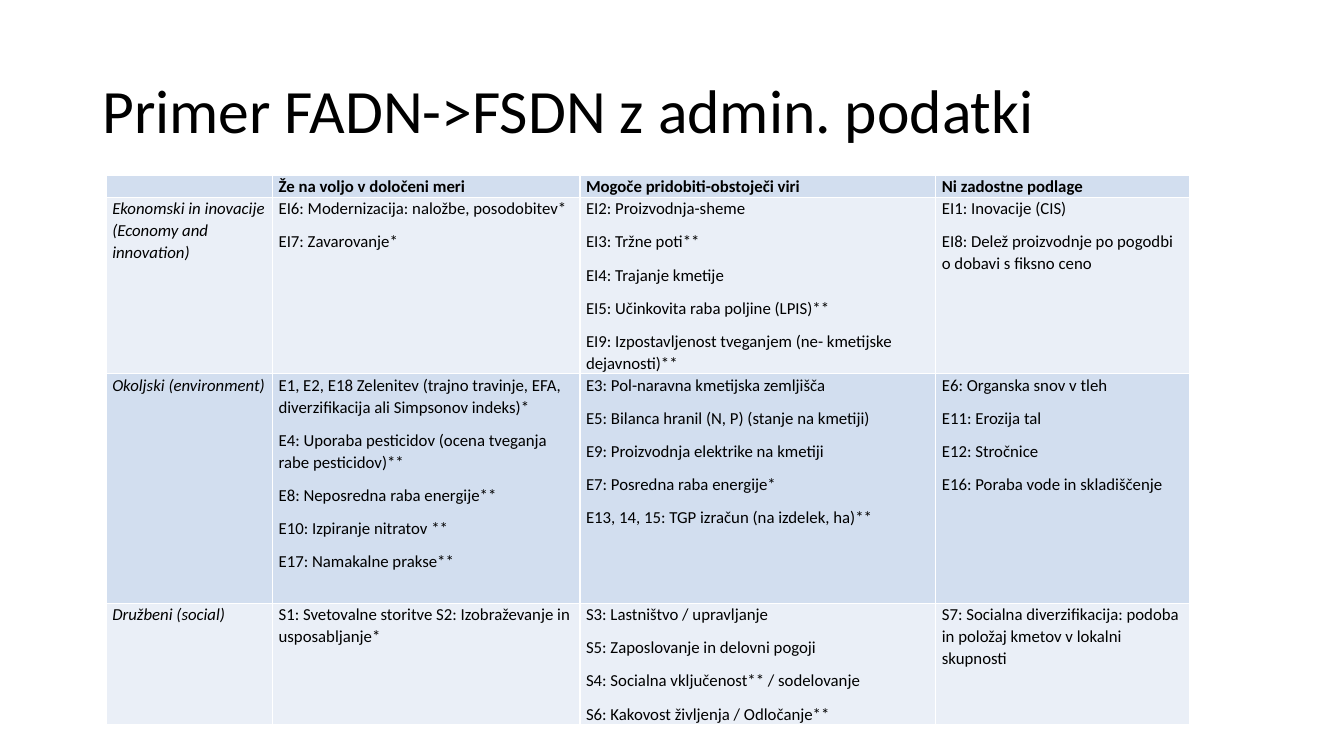
import lxml.etree
import pptx
import pptx.dml.color
import pptx.enum.text
import pptx.oxml.ns
import pptx.util

Pt = pptx.util.Pt
RGB = pptx.dml.color.RGBColor.from_string
qn = pptx.oxml.ns.qn

TITLE = "Primer FADN->FSDN z admin. podatki"
HEADER = ["", "Že na voljo v določeni meri", "Mogoče pridobiti-obstoječi viri", "Ni zadostne podlage"]
# Each row: topic, then the list of indicators in each availability column
TOPICS = [
    ("Ekonomski in inovacije (Economy and innovation)",
     ["EI6: Modernizacija: naložbe, posodobitev*", "EI7: Zavarovanje*"],
     ["EI2: Proizvodnja-sheme", "EI3: Tržne poti**", "EI4: Trajanje kmetije",
      "EI5: Učinkovita raba poljine (LPIS)**",
      "EI9: Izpostavljenost tveganjem (ne- kmetijske dejavnosti)**"],
     ["EI1: Inovacije (CIS)", "EI8: Delež proizvodnje po pogodbi o dobavi s fiksno ceno"]),
    ("Okoljski (environment)",
     ["E1, E2, E18 Zelenitev (trajno travinje, EFA, diverzifikacija ali Simpsonov indeks)*",
      "E4: Uporaba pesticidov (ocena tveganja rabe pesticidov)**",
      "E8: Neposredna raba energije**", "E10: Izpiranje nitratov **",
      "E17: Namakalne prakse**"],
     ["E3: Pol-naravna kmetijska zemljišča", "E5: Bilanca hranil (N, P) (stanje na kmetiji)",
      "E9: Proizvodnja elektrike na kmetiji", "E7: Posredna raba energije*",
      "E13, 14, 15: TGP izračun (na izdelek, ha)**"],
     ["E6: Organska snov v tleh", "E11: Erozija tal", "E12: Stročnice",
      "E16: Poraba vode in skladiščenje"]),
    ("Družbeni (social)",
     ["S1: Svetovalne storitve S2: Izobraževanje in usposabljanje*"],
     ["S3: Lastništvo / upravljanje", "S5: Zaposlovanje in delovni pogoji",
      "S4: Socialna vključenost** / sodelovanje", "S6: Kakovost življenja / Odločanje**"],
     ["S7: Socialna diverzifikacija: podoba in položaj kmetov v lokalni skupnosti"]),
]
COLORS = {"text": "000000", "border": "FFFFFF", "dark band": "D2DEEF", "light band": "EAEFF7"}
FONT = "Calibri"
TITLE_BOX = (66, 28.8, 828, 104.4)
TABLE_LEFT, TABLE_TOP = 75.9, 125.4
COL_WIDTHS = [118.8, 219.6, 254.2, 181.4]
ROW_HEIGHTS = [15.4, 125.5, 164, 86]


def add_run(p, text, size, bold=False, italic=False):
    r = p.add_run()
    r.text = text
    r.font.name, r.font.size = FONT, Pt(size)
    r.font.bold, r.font.italic = bold, italic
    r.font.color.rgb = RGB(COLORS["text"])


def add_borders(cell):
    tcPr = cell._tc.get_or_add_tcPr()
    for side in ("a:lnL", "a:lnR", "a:lnT", "a:lnB"):
        ln = lxml.etree.SubElement(tcPr, qn(side), w=str(Pt(1)))
        fill = lxml.etree.SubElement(ln, qn("a:solidFill"))
        lxml.etree.SubElement(fill, qn("a:srgbClr"), val=COLORS["border"])


def fill_cell(cell, lines, band, bold, italic):
    cell.margin_left = cell.margin_right = Pt(4.3)
    cell.margin_top = cell.margin_bottom = 0
    add_borders(cell)
    cell.fill.solid()
    cell.fill.fore_color.rgb = RGB(COLORS[band])
    tf = cell.text_frame
    for i, line in enumerate(lines):
        p = tf.add_paragraph() if i else tf.paragraphs[0]
        p.line_spacing, p.space_after = 1.07, Pt(8)
        if line:
            add_run(p, line, 12, bold, italic)
        else:  # keeps the empty cell from stretching its row
            lxml.etree.SubElement(p._p, qn("a:endParaRPr"), sz="1200")


def main():
    prs = pptx.Presentation()
    prs.slide_width, prs.slide_height = Pt(960), Pt(540)
    s = prs.slides.add_slide(prs.slide_layouts[5])

    title = s.shapes.title
    title.left, title.top, title.width, title.height = map(Pt, TITLE_BOX)
    title.text_frame.vertical_anchor = pptx.enum.text.MSO_ANCHOR.MIDDLE
    p = title.text_frame.paragraphs[0]
    p.alignment = pptx.enum.text.PP_ALIGN.LEFT
    p.line_spacing = 0.9
    add_run(p, TITLE, 44)

    rows = [[[text] for text in HEADER]]
    rows += [[[topic], *columns] for topic, *columns in TOPICS]
    table = s.shapes.add_table(len(rows), len(HEADER), Pt(TABLE_LEFT), Pt(TABLE_TOP),
                               Pt(sum(COL_WIDTHS)), Pt(sum(ROW_HEIGHTS))).table
    table.first_row = table.horz_banding = False
    for column, width in zip(table.columns, COL_WIDTHS):
        column.width = Pt(width)
    for i, row in enumerate(rows):
        table.rows[i].height = Pt(ROW_HEIGHTS[i])
        band = "light band" if i % 2 else "dark band"
        for j, lines in enumerate(row):
            fill_cell(table.cell(i, j), lines, band, bold=i == 0, italic=j == 0)

    prs.save("out.pptx")


if __name__ == "__main__":
    main()
